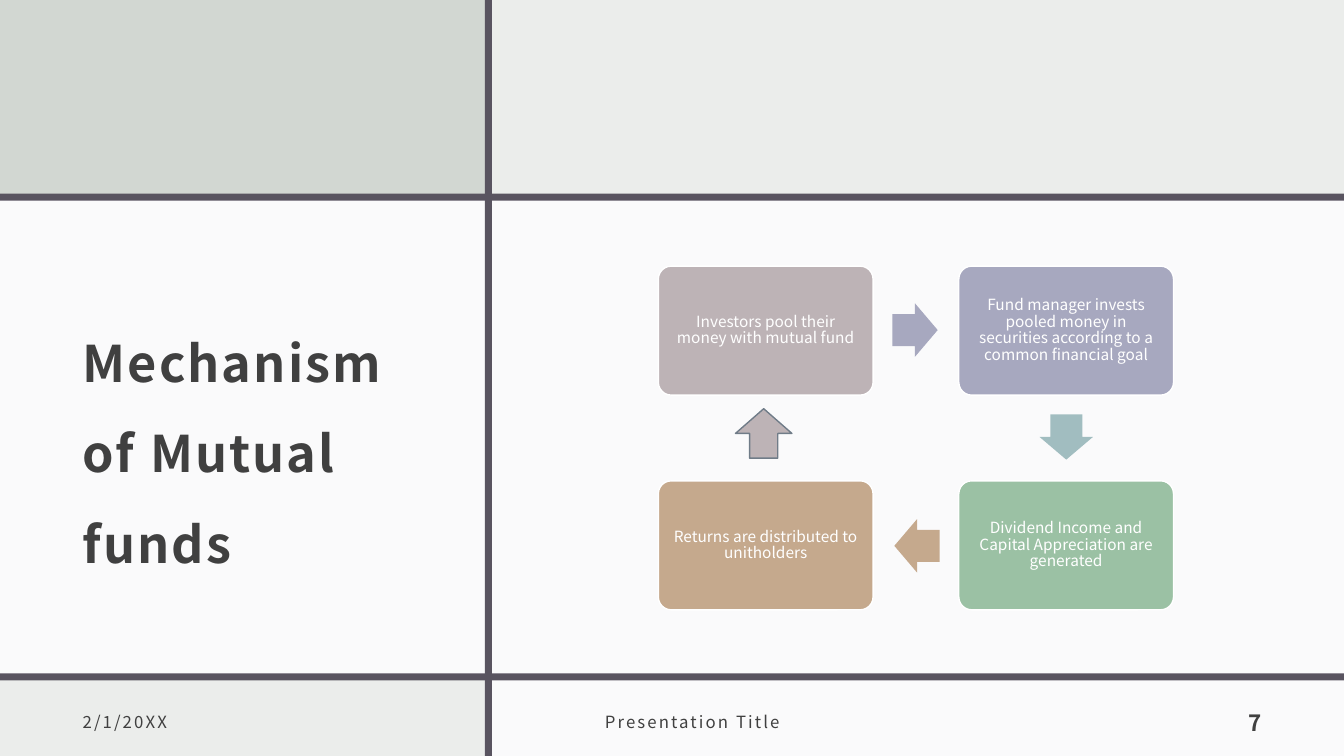
"""Build the slide on the mechanism of mutual funds."""
from pptx import Presentation
from pptx.dml.color import RGBColor
from pptx.enum.shapes import MSO_SHAPE
from pptx.enum.text import MSO_ANCHOR, PP_ALIGN
from pptx.util import Emu, Pt

COLORS = {
    "background": "EBEDEB", "panel": "FAFAFB", "accent": "D2D7D2",
    "bar": "595460", "text": "404040", "white": "FFFFFF", "outline": "707C88",
    "mauve": "BDB3B6", "lavender": "A7A8BF", "teal": "A1BDC0",
    "green": "9BC1A4", "tan": "C5A98D",
}
WIDTH, HEIGHT = 1333, 750
BAR = 7


class SlideBuilder:
    """Hold the slide and its style, and add elements measured in px."""

    scale = 9144
    font = "Noto Sans CJK JP"

    def __init__(self, presentation):
        presentation.slide_width = self.px(WIDTH)
        presentation.slide_height = self.px(HEIGHT)
        self.slide = presentation.slides.add_slide(presentation.slide_layouts[6])
        self.paint(self.slide.background.fill, "background")

    def px(self, length):
        return Emu(length * self.scale)

    def paint(self, fill, color):
        fill.solid()
        fill.fore_color.rgb = RGBColor.from_string(COLORS[color])

    def apply(self, target, values):
        for name, value in values.items():
            setattr(target, name, value)

    def shape(self, kind, box, color, outline=None, adjustments=(), rotation=0):
        shape = self.slide.shapes.add_shape(kind, *map(self.px, box))
        shape.shadow.inherit = False
        shape.rotation = rotation
        for index, value in enumerate(adjustments):
            shape.adjustments[index] = value
        self.paint(shape.fill, color)
        if outline:
            self.paint(shape.line.fill, outline)
            shape.line.width = Pt(1)
        else:
            shape.line.fill.background()
        return shape

    def rectangle(self, box, color):
        self.shape(MSO_SHAPE.RECTANGLE, box, color)

    def arrow(self, box, color, rotation, outline=None, adjustments=(0.6, 0.5)):
        self.shape(MSO_SHAPE.RIGHT_ARROW, box, color, outline, adjustments, rotation)

    def set_text(self, shape, text, margins, color, size, bold=False, spacing=0,
                 anchor=MSO_ANCHOR.MIDDLE, **paragraph_format):
        frame = shape.text_frame
        sides = ("margin_left", "margin_top", "margin_right", "margin_bottom")
        self.apply(frame, dict(zip(sides, map(self.px, margins))))
        self.apply(frame, {"word_wrap": True, "vertical_anchor": anchor})
        paragraph = frame.paragraphs[0]
        self.apply(paragraph, paragraph_format)
        run = paragraph.add_run()
        run.text = text
        self.apply(run.font, {"name": self.font, "size": Pt(size), "bold": bold})
        self.paint(run.font.fill, color)
        if spacing:
            run._r.get_or_add_rPr().set("spc", str(spacing))

    def label(self, box, text, size, **values):
        shape = self.slide.shapes.add_textbox(*map(self.px, box))
        self.set_text(shape, text, (12, 12, 12, 10), "text", size, spacing=150, **values)

    def card(self, box, text, color):
        shape = self.shape(MSO_SHAPE.ROUNDED_RECTANGLE, box, color, "white", (0.1,))
        self.set_text(shape, text, (8, 8, 8, 8), "white", 11,
                      alignment=PP_ALIGN.CENTER, line_spacing=0.9)


def main():
    presentation = Presentation()
    builder = SlideBuilder(presentation)

    for box, color in (
        ((0, 193, WIDTH, 478), "panel"),
        ((0, 0, 484, 197), "accent"),
        ((481, 674, 852, 76), "panel"),
        ((0, 192, WIDTH, BAR), "bar"),
        ((0, 668, WIDTH, BAR), "bar"),
        ((481, 0, BAR, HEIGHT), "bar"),
    ):
        builder.rectangle(box, color)

    builder.label((70, 234, 373, 398), "Mechanism of Mutual funds", 36,
                  bold=True, line_spacing=1.5)
    builder.label((70, 690, 373, 50), "2/1/20XX", 12)
    builder.label((588, 690, 541, 50), "Presentation Title", 12)
    builder.label((1156, 690, 107, 50), "7", 16, bold=True,
                  anchor=MSO_ANCHOR.BOTTOM, alignment=PP_ALIGN.RIGHT)

    left, right, top, bottom = 653, 951, 264, 477
    for x, y, text, color in (
        (left, top, "Investors pool their money with mutual fund", "mauve"),
        (right, top, "Fund manager invests pooled money in securities "
                     "according to a common financial goal", "lavender"),
        (right, bottom, "Dividend Income and Capital Appreciation are generated", "green"),
        (left, bottom, "Returns are distributed to unitholders", "tan"),
    ):
        builder.card((x, y, 213, 128), text, color)

    for x, y, color, rotation in (
        (885, 301, "lavender", 0),
        (1035, 407, "teal", 90),
        (887, 515, "tan", 180),
    ):
        builder.arrow((x, y, 45, 53), color, rotation)
    builder.arrow((733, 402, 49, 56), "mauve", 270, "outline", (0.5, 0.5))

    presentation.save("out.pptx")


if __name__ == "__main__":
    main()
